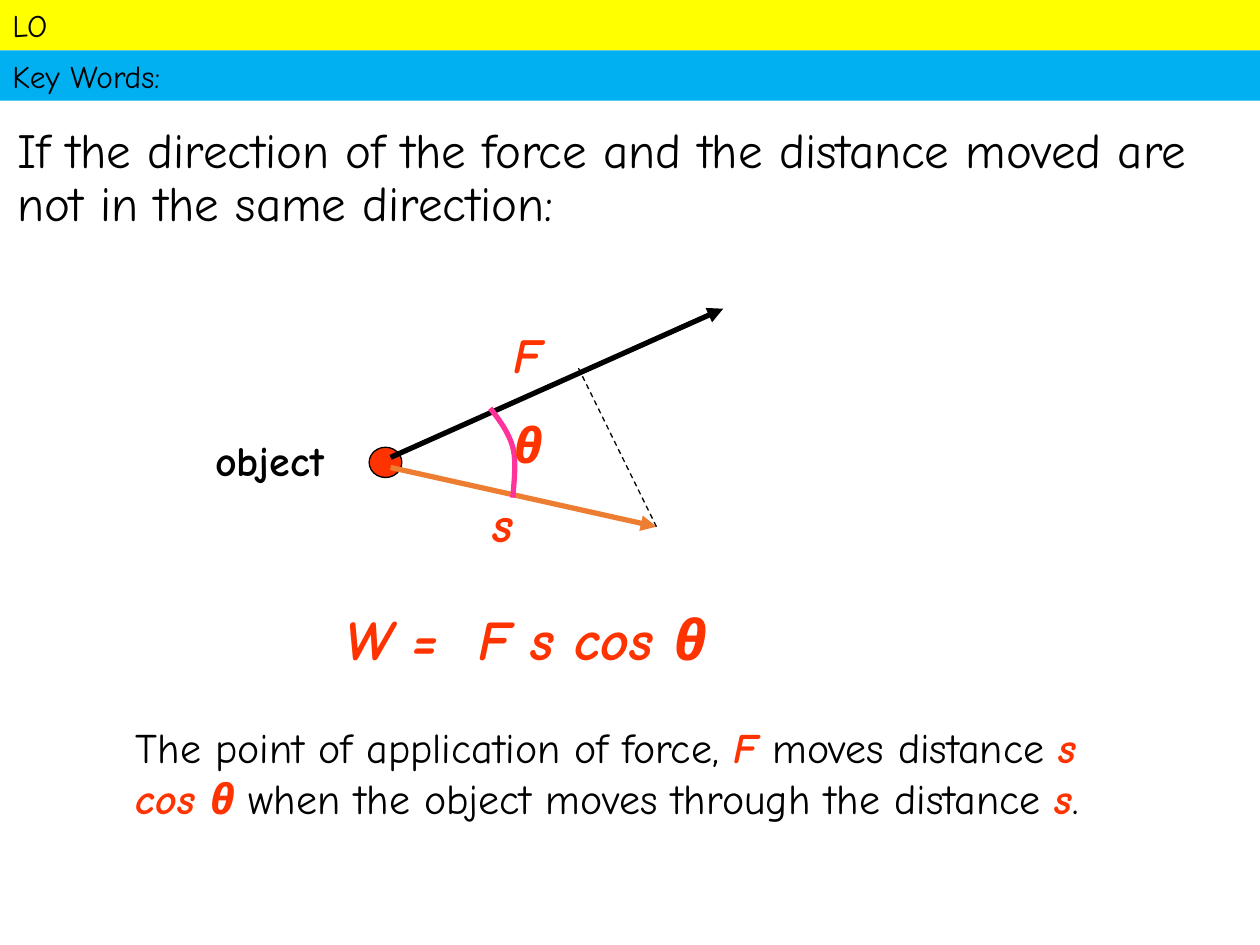
from lxml import etree
from pptx import Presentation
from pptx import util as u
from pptx.dml.color import RGBColor
from pptx.enum import dml, shapes, text
from pptx.oxml import ns

UNIT = u.Inches(0.1)  # the slide is a grid of 100 columns by 75 rows
COLS, ROWS = 100, 75
FONT = "Comic Neue"
BLACK, RED, PINK, ORANGE = "000000", "FF3300", "FF3399", "ED7D31"
YELLOW, BLUE = "FFFF00", "00B0F0"


def grid(*cells):
    return [round(cell * UNIT) for cell in cells]


def rgb(code):
    return RGBColor.from_string(code)


def style_line(line, color, width, dash=None):
    line.color.rgb = rgb(color)
    line.width = u.Pt(width)
    if dash:
        line.dash_style = dash


def write(frame, pieces, size, before=0, spacing=None):
    """Fill a frame with one paragraph of (words, color, bold, italic) pieces."""
    frame.word_wrap = True
    paragraph = frame.paragraphs[0]
    paragraph.alignment = text.PP_ALIGN.LEFT
    paragraph.space_before = u.Pt(before)
    if spacing:
        paragraph.line_spacing = spacing
    for words, color, bold, italic in pieces:
        run = paragraph.add_run()
        run.text = words
        font = run.font
        font.name, font.size = FONT, u.Pt(size)
        font.bold, font.italic = bold, italic
        font.color.rgb = rgb(color)


def plain(words):
    return words, BLACK, False, False


def symbol(words):
    return words, RED, True, True


def add_label(parent, box, pieces, size, before=0, spacing=None, grow=True):
    frame = parent.add_textbox(*grid(*box)).text_frame
    write(frame, pieces, size, before, spacing)
    frame.auto_size = (text.MSO_AUTO_SIZE.SHAPE_TO_FIT_TEXT if grow
                       else text.MSO_AUTO_SIZE.NONE)


def add_line(parent, start, end, color, width, arrow=False, dash=None):
    connector = parent.add_connector(shapes.MSO_CONNECTOR.STRAIGHT,
                                     *grid(*start, *end))
    style_line(connector.line, color, width, dash)
    if arrow:
        etree.SubElement(connector.line._get_or_add_ln(), ns.qn("a:tailEnd"),
                         type="triangle")
    etree.SubElement(connector._element.spPr, ns.qn("a:effectLst"))


def add_header(parent, box, captions):
    """Stack one coloured bar per (words, fill) caption."""
    left, top, width, height = box
    row = height / len(captions)
    for index, (words, fill) in enumerate(captions):
        bar = parent.add_shape(shapes.MSO_SHAPE.RECTANGLE,
                               *grid(left, top + index * row, width, row))
        bar.shadow.inherit = False
        bar.fill.solid()
        bar.fill.fore_color.rgb = rgb(fill)
        bar.line.fill.background()
        bar.text_frame.vertical_anchor = text.MSO_ANCHOR.MIDDLE
        write(bar.text_frame, [plain(words)], 18)


def bezier(p0, p1, p2, p3, steps=12):
    for step in range(1, steps + 1):
        t = step / steps
        yield tuple((1 - t) ** 3 * a + 3 * (1 - t) ** 2 * t * b
                    + 3 * (1 - t) * t ** 2 * c + t ** 3 * d
                    for a, b, c, d in zip(p0, p1, p2, p3))


def add_angle(parent, knots):
    """Draw an open curve through two cubic segments given by seven knots."""
    points = [*bezier(*knots[:4]), *bezier(*knots[3:])]
    builder = parent.build_freeform(*grid(*knots[0]))
    builder.add_line_segments([grid(*point) for point in points], close=False)
    arc = builder.convert_to_shape()
    arc.shadow.inherit = False
    arc.fill.background()
    style_line(arc.line, PINK, 3)


def add_force_diagram(slide, left, top):
    def at(x, y, *size):
        return (left + x, top + y, *size)

    group = slide.shapes.add_group_shape().shapes
    body = group.add_shape(shapes.MSO_SHAPE.OVAL, *grid(*at(13.2, 11, 2.6, 2.4)))
    body.shadow.inherit = False
    body.fill.solid()
    body.fill.fore_color.rgb = rgb(RED)
    style_line(body.line, BLACK, 0.75)

    displaced = at(36, 17.3)
    add_line(group, at(14.9, 11.8), at(41.3, 0), BLACK, 3, arrow=True)
    add_line(group, at(14.9, 12.6), displaced, ORANGE, 3, arrow=True)
    add_line(group, displaced, at(29.8, 4.7), BLACK, 0.75,
             dash=dml.MSO_LINE.DASH)
    add_angle(group, [at(22.8, 7.9), at(23.6, 8.9), at(24.3, 9.9),
                      at(24.6, 11), at(24.9, 12.2), at(24.7, 13.6),
                      at(24.6, 15)])
    for name, x, y, width in (("F", 23.7, 0.8, 8.8), ("s", 22, 14.2, 8.8),
                              ("θ", 23.7, 7.9, 5.3)):
        add_label(group, at(x, y, width, 5.7), [symbol(name)], 28, before=14)
    add_label(group, at(0, 9.5, 13.2, 9.1), [("object", BLACK, True, False)],
              24, before=12)


def add_work_slide(deck):
    slide = deck.slides.add_slide(deck.slide_layouts[6])
    add_header(slide.shapes, (0, 0, COLS, 8),
               [("LO", YELLOW), ("Key Words:", BLUE)])
    add_label(slide.shapes, (0.4, 9.5, COLS, 12.6),
              [plain("If the direction of the force and the distance moved "
                     "are not in the same direction:")],
              28, before=10, spacing=0.9, grow=False)
    add_label(slide.shapes, (26.4, 48.1, 38.6, 5.9),
              [symbol("W =  F s cos θ")], 32, before=6.4, spacing=0.9)
    add_label(slide.shapes, (9.8, 56.8, 81.6, 13.1),
              [plain("The point of application of force,"), symbol(" F"),
               plain(" moves distance "), symbol("s cos θ"),
               plain(" when the object moves through the distance "),
               symbol("s"), plain(".")], 24, before=12)
    add_force_diagram(slide, 16.1, 24.5)


def main():
    deck = Presentation()
    deck.slide_width, deck.slide_height = grid(COLS, ROWS)
    add_work_slide(deck)
    deck.save("out.pptx")


if __name__ == "__main__":
    main()
